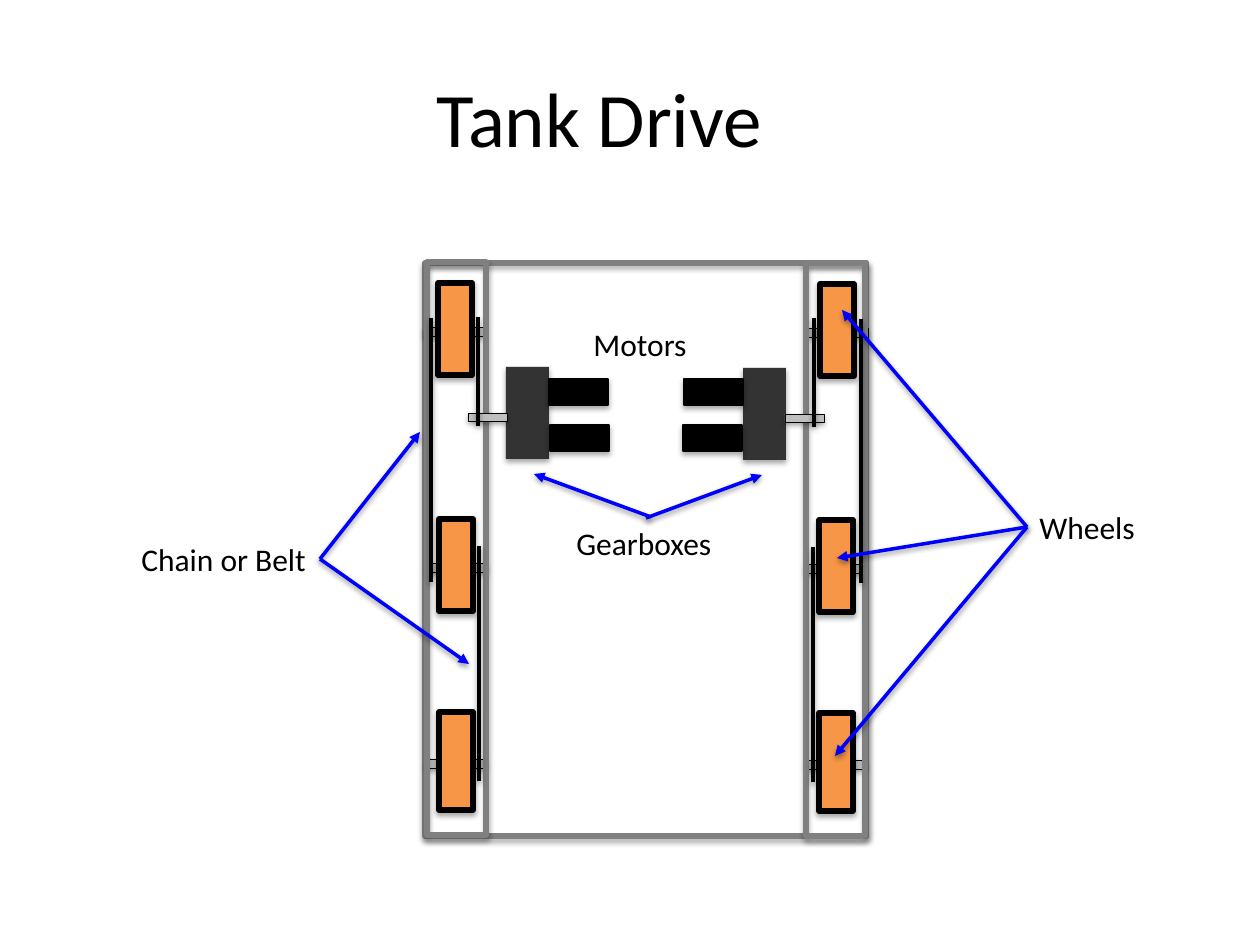
from lxml.etree import SubElement
from pptx import Presentation
from pptx.dml.color import RGBColor
from pptx.enum.shapes import MSO_CONNECTOR as CONNECTOR, MSO_SHAPE as SHAPE
from pptx.enum.text import MSO_ANCHOR as ANCHOR, MSO_AUTO_SIZE as AUTO_SIZE, PP_ALIGN as ALIGN
from pptx.oxml.ns import qn
from pptx.util import Emu, Pt

SCALE = 914400 / 126
MIRROR_SUM = 1292
RIGHT_DROP = 1
TOP, LEFT, RIGHT = 0, 1, 3
BLACK, GRAY, SILVER, CHARCOAL = "000000", "808080", "BFBFBF", "333333"
ORANGE, BLUE = "F79646", "0000FF"

AXLES = [(808, 327, 60, 9), (805, 563, 60, 9), (806, 759, 60, 9)]
RAIL = (806, 262, 59, 573)
WHEELS = [(820, 283, 34, 92), (819, 519, 34, 92), (819, 712, 34, 98)]
GEARBOX = (743, 367, 43, 92)
SHAFT = (785, 413, 39, 8)
CHAINS = [(814, 426, 317), (861, 582, 318), (813, 781, 546)]
MOTORS = [(684, 379, 59, 26), (683, 425, 59, 26)]


def px(value):
    return Emu(round(value * SCALE))


def box_px(box):
    return [px(value) for value in box]


def color(hex_value):
    return RGBColor.from_string(hex_value)


def fill_shadow(effects, distance, alpha):
    shadow = SubElement(effects, qn("a:outerShdw"), blurRad="40000", dist=str(distance),
                        dir="5400000", rotWithShape="0")
    black = SubElement(shadow, qn("a:srgbClr"), val=BLACK)
    SubElement(black, qn("a:alpha"), val=str(alpha))


def add_rectangle(slide, box, fill=None, line=None, width=0):
    shape = slide.shapes.add_shape(SHAPE.RECTANGLE, *box_px(box))
    if fill:
        shape.fill.solid()
        shape.fill.fore_color.rgb = color(fill)
    else:
        shape.fill.background()
    if line:
        shape.line.color.rgb = color(line)
        shape.line.width = Pt(width)
    else:
        shape.line.fill.background()
    shape.shadow.inherit = False
    effects = shape._element.spPr.find(qn("a:effectLst"))
    fill_shadow(effects, 23000, 35000)


def add_line(slide, start, end, line, arrow=False):
    connector = slide.shapes.add_connector(CONNECTOR.STRAIGHT, *box_px(start + end))
    connector.line.color.rgb = color(line)
    connector.line.width = Pt(2)
    properties = connector._element.spPr
    if arrow:
        SubElement(properties.find(qn("a:ln")), qn("a:tailEnd"), type="triangle")
    fill_shadow(SubElement(properties, qn("a:effectLst")), 20000, 38000)
    return connector


def format_text(paragraph, text, size):
    paragraph.text = text
    paragraph.font.size = Pt(size)
    paragraph.font.name = "Calibri"
    paragraph.font.color.rgb = color(BLACK)


def add_title(slide, text):
    title = slide.shapes.title
    title.left, title.top, title.width, title.height = box_px((241, 38, 717, 158))
    title.text_frame.vertical_anchor = ANCHOR.MIDDLE
    paragraph = title.text_frame.paragraphs[0]
    format_text(paragraph, text, 44)
    paragraph.alignment = ALIGN.CENTER


def add_label(slide, text, box):
    label = slide.shapes.add_textbox(*box_px(box))
    label.text_frame.word_wrap = False
    label.text_frame.auto_size = AUTO_SIZE.SHAPE_TO_FIT_TEXT
    format_text(label.text_frame.paragraphs[0], text, 18)
    return label


def add_pointers(slide, label, side, start, targets):
    for target in targets:
        pointer = add_line(slide, start, target, BLUE, arrow=True)
        pointer.begin_connect(label, side)


def add_side(slide, mirrored):
    drop = 0 if mirrored else RIGHT_DROP

    def place(box, shift=drop):
        left, top, width, height = box
        if mirrored:
            left = MIRROR_SUM - left - width
        return left, top + shift, width, height

    for axle in AXLES:
        add_rectangle(slide, place(axle), SILVER, BLACK, 0.25)
    add_rectangle(slide, place(RAIL), line=GRAY, width=3)
    for wheel in WHEELS:
        add_rectangle(slide, place(wheel), ORANGE, BLACK, 3)
    add_rectangle(slide, place(GEARBOX), CHARCOAL)
    add_rectangle(slide, place(SHAFT), SILVER, BLACK, 0.25)
    for chain_x, bottom, top in CHAINS:
        x = MIRROR_SUM - chain_x if mirrored else chain_x
        add_line(slide, (x, bottom + drop), (x, top + drop), BLACK)
    for motor in MOTORS:
        add_rectangle(slide, place(motor, 0), BLACK, BLACK, 0.75)


def main():
    presentation = Presentation()
    presentation.slide_width, presentation.slide_height = px(1260), px(945)
    slide = presentation.slides.add_slide(presentation.slide_layouts[5])
    add_title(slide, "Tank Drive")
    add_rectangle(slide, (425, 263, 442, 573), line=GRAY, width=3)
    for mirrored in (False, True):
        add_side(slide, mirrored)

    gearboxes = add_label(slide, "Gearboxes", (564, 518, 164, 50))
    wheels = add_label(slide, "Wheels", (1027, 502, 122, 50))
    chain = add_label(slide, "Chain or Belt", (129, 534, 191, 50))
    add_label(slide, "Motors", (581, 319, 121, 50))

    add_pointers(slide, wheels, LEFT, (1027, 527), [(842, 310), (837, 558), (835, 756)])
    add_pointers(slide, chain, RIGHT, (320, 559), [(420, 432), (469, 664)])
    add_pointers(slide, gearboxes, TOP, (646, 518), [(762, 475)])
    add_line(slide, (651, 517), (534, 474), BLUE, arrow=True)
    presentation.save("out.pptx")


if __name__ == "__main__":
    main()
